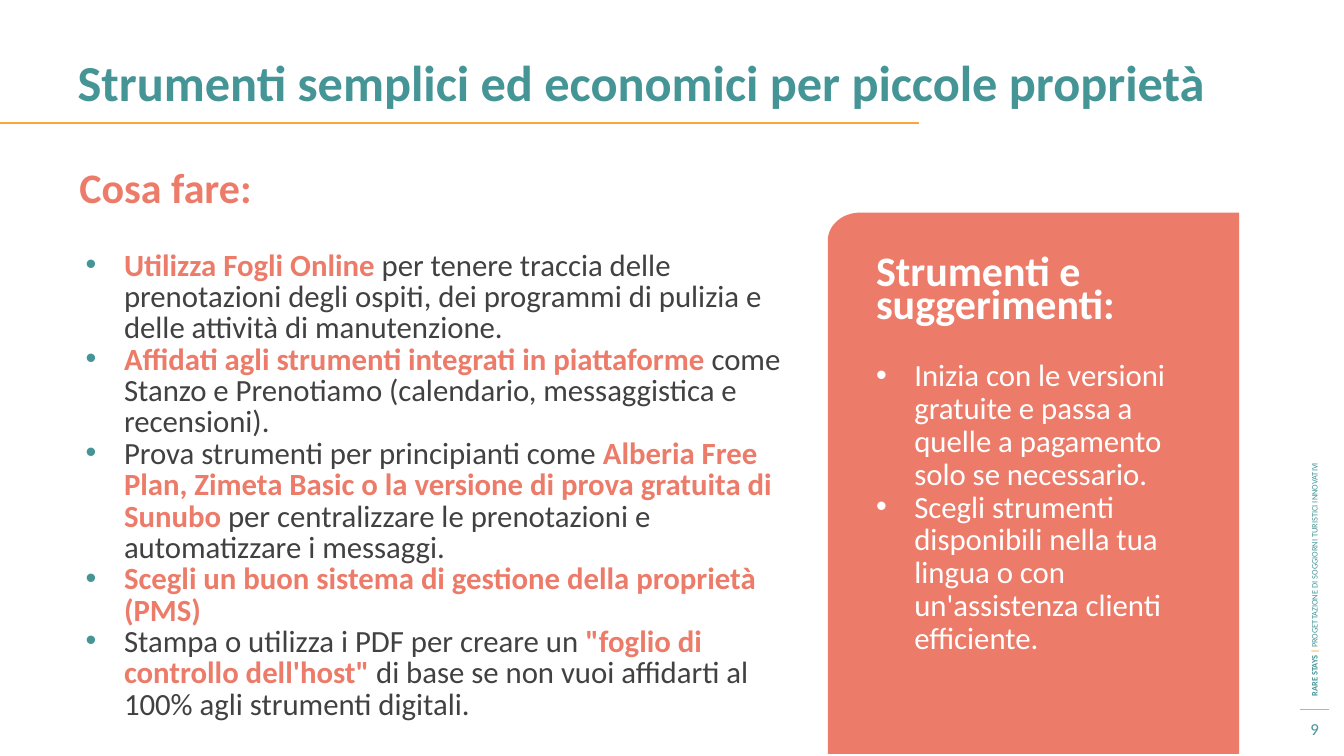
from math import cos, pi, sin

from lxml import etree
from pptx import Presentation
from pptx.dml.color import RGBColor
from pptx.enum.shapes import MSO_CONNECTOR
from pptx.enum.text import MSO_ANCHOR, MSO_AUTO_SIZE, PP_ALIGN
from pptx.oxml.ns import qn
from pptx.util import Inches, Pt

TEAL = RGBColor(0x45, 0x95, 0x97)
CORAL = RGBColor(0xEC, 0x7C, 0x69)
AMBER = RGBColor(0xFB, 0xA6, 0x3B)
GREY = RGBColor(0x41, 0x41, 0x41)
WHITE = RGBColor(0xFF, 0xFF, 0xFF)
LEFT, CENTER = PP_ALIGN.LEFT, PP_ALIGN.CENTER
TOP, MIDDLE = MSO_ANCHOR.TOP, MSO_ANCHOR.MIDDLE
FONT = "Calibri"

TITLE = "Strumenti semplici ed economici per piccole proprietà"
SUBTITLE = "Cosa fare:"
PAGE_NUMBER = "9"
# Each run is (text, colour, bold)
FOOTER = [
    ("RARE STAYS ", TEAL, True),
    ("| ", AMBER, True),
    ("PROGETTAZIONE DI SOGGIORNI TURISTICI INNOVATIVI", TEAL, False),
]
ACTIONS = [
    [("Utilizza Fogli Online ", CORAL, True),
     ("per tenere traccia delle prenotazioni degli ospiti, dei programmi di pulizia "
      "e delle attività di manutenzione.", GREY, False)],
    [("Affidati agli strumenti integrati in piattaforme ", CORAL, True),
     ("come Stanzo e Prenotiamo (calendario, messaggistica e recensioni).", GREY, False)],
    [("Prova strumenti per principianti come ", GREY, False),
     ("Alberia Free Plan, Zimeta Basic o la versione di prova gratuita di Sunubo ",
      CORAL, True),
     ("per centralizzare le prenotazioni e automatizzare i messaggi.", GREY, False)],
    [("Scegli un buon sistema di gestione della proprietà (PMS)", CORAL, True)],
    [("Stampa o utilizza i PDF per creare un ", GREY, False),
     ("\"foglio di controllo dell'host\" ", CORAL, True),
     ("di base se non vuoi affidarti al 100% agli strumenti digitali.", GREY, False)],
]
CARD_TITLE = "Strumenti e suggerimenti:"
TIPS = [
    "Inizia con le versioni gratuite e passa a quelle a pagamento solo se necessario.",
    "Scegli strumenti disponibili nella tua lingua o con un'assistenza clienti efficiente.",
]


def place(shape, left, top, width, height, anchor=TOP):
    """Position a text shape and return its text frame, wrapped and without autofit."""
    shape.left, shape.top = Inches(left), Inches(top)
    shape.width, shape.height = Inches(width), Inches(height)
    frame = shape.text_frame
    frame.word_wrap = True
    frame.auto_size = MSO_AUTO_SIZE.NONE
    frame.vertical_anchor = anchor
    return frame


def add_text_frame(slide, left, top, width, height, anchor=TOP):
    box = slide.shapes.add_textbox(0, 0, 0, 0)
    return place(box, left, top, width, height, anchor)


def style_font(font, size, color, bold):
    font.name, font.size, font.bold = FONT, Pt(size), bold
    font.color.rgb = color


def write(paragraph, text, size, color, bold=False, spacing=None, alignment=LEFT):
    paragraph.text = text
    paragraph.alignment = alignment
    if spacing:
        paragraph.line_spacing = Pt(spacing)
    style_font(paragraph.font, size, color, bold)


def write_runs(paragraph, runs, size):
    for text, color, bold in runs:
        run = paragraph.add_run()
        run.text = text
        style_font(run.font, size, color, bold)


def add_bullet(paragraph, color):
    properties = paragraph._p.get_or_add_pPr()
    properties.set("marL", str(Inches(0.38)))
    properties.set("indent", str(-Inches(0.38)))
    bullet_color = etree.SubElement(properties, qn("a:buClr"))
    etree.SubElement(bullet_color, qn("a:srgbClr"), val=str(color))
    etree.SubElement(properties, qn("a:buFont"), typeface="Arial")
    etree.SubElement(properties, qn("a:buChar"), char="•")


def paragraphs_for(frame, count):
    return [frame.paragraphs[0]] + [frame.add_paragraph() for _ in range(count - 1)]


def add_rule(slide, left, right, y, weight):
    rule = slide.shapes.add_connector(
        MSO_CONNECTOR.STRAIGHT, Inches(left), Inches(y), Inches(right), Inches(y))
    rule.line.color.rgb = AMBER
    rule.line.width = Pt(weight)
    etree.SubElement(rule._element.spPr, qn("a:effectLst"))


def add_card(slide, left, top, right, bottom, radius_x, radius_y):
    """Draw a rectangle whose top left corner alone is rounded."""
    steps = 16
    angles = [pi / 2 * step / steps for step in range(steps + 1)]
    corner = [(left + radius_x * (1 - cos(angle)), top + radius_y * (1 - sin(angle)))
              for angle in angles]
    points = corner + [(right, top), (right, bottom), (left, bottom)]
    builder = slide.shapes.build_freeform(
        Inches(points[0][0]), Inches(points[0][1]))
    builder.add_line_segments([(Inches(x), Inches(y)) for x, y in points[1:]])
    card = builder.convert_to_shape()
    card.fill.solid()
    card.fill.fore_color.rgb = CORAL
    card.line.fill.background()
    card.shadow.inherit = False


def main():
    presentation = Presentation()
    presentation.slide_width, presentation.slide_height = Inches(13.33), Inches(7.5)
    slide = presentation.slides.add_slide(presentation.slide_layouts[1])
    title, body = slide.placeholders

    frame = place(title, 0.67, 0.54, 12, 0.88)
    write(frame.paragraphs[0], TITLE, 36, TEAL, True, 37.2)
    add_rule(slide, 0, 9.11, 1.22, 1.5)

    frame = add_text_frame(slide, 0.69, 1.65, 6.14, 0.88)
    write(frame.paragraphs[0], SUBTITLE, 30, CORAL, True, 29)

    frame = place(body, 0.75, 2.44, 7.27, 4)
    for paragraph, runs in zip(paragraphs_for(frame, len(ACTIONS)), ACTIONS):
        add_bullet(paragraph, TEAL)
        paragraph.space_before = Pt(0)
        paragraph.line_spacing = Pt(22.4)
        write_runs(paragraph, runs, 22)

    add_card(slide, 8.21, 2.11, 12.29, 7.48, 0.32, 0.28)
    frame = add_text_frame(slide, 8.59, 2.55, 3.45, 3.59)
    heading, *tips = paragraphs_for(frame, 1 + len(TIPS))
    write(heading, CARD_TITLE, 30, WHITE, True, 23.4)
    heading.space_after = Pt(23.4)
    for paragraph, tip in zip(tips, TIPS):
        add_bullet(paragraph, WHITE)
        write(paragraph, tip, 22, WHITE, spacing=23.4)

    footer = slide.shapes.add_textbox(0, 0, 0, 0)
    footer.rotation = 270
    frame = place(footer, 10.15, 4.02, 5.77, 0.2, MIDDLE)
    write_runs(frame.paragraphs[0], FOOTER, 6)
    add_rule(slide, 12.89, 13.18, 7.04, 0.75)
    frame = add_text_frame(slide, 12.78, 7.06, 0.52, 0.34, MIDDLE)
    write(frame.paragraphs[0], PAGE_NUMBER, 12, TEAL, alignment=CENTER)

    presentation.save("out.pptx")


if __name__ == "__main__":
    main()
